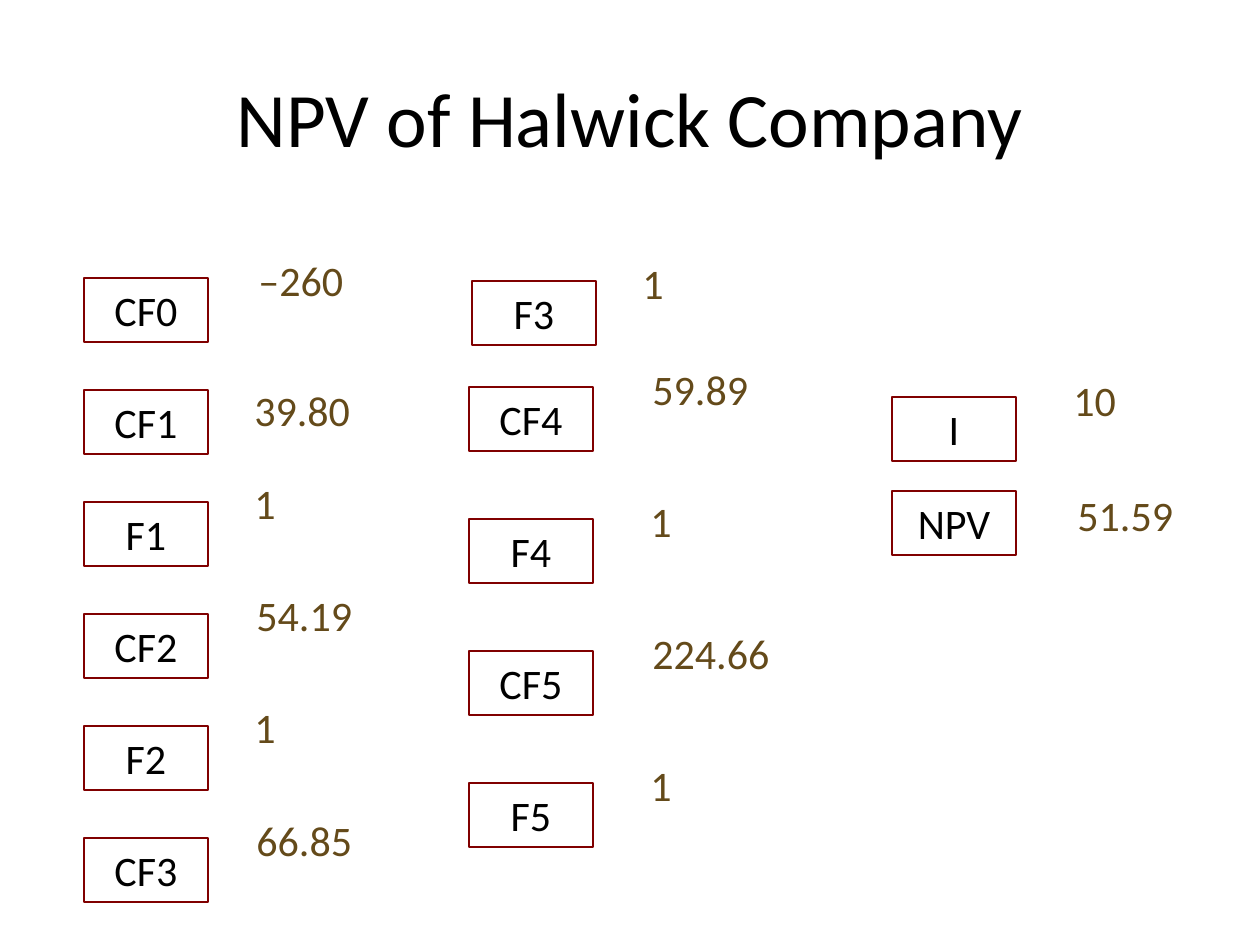
"""Build the NPV slide: calculator keys paired with their entries."""
from dataclasses import dataclass

from pptx import Presentation
from pptx.dml.color import RGBColor
from pptx.enum.shapes import MSO_SHAPE
from pptx.enum.text import MSO_ANCHOR, MSO_AUTO_SIZE, PP_ALIGN
from pptx.util import Emu, Pt

SCALE = 914400 / 126
COLORS = {"black": "000000", "white": "FFFFFF", "brown": "644A1A", "maroon": "800000"}
FONT = "Calibri"
KEY_W, KEY_H, TEXT_H = 124, 64, 63


@dataclass
class Entry:
    key: str
    value: str
    left: int
    top: int
    dx: int
    dy: int = -30
    width: int = 124


LEFT = [
    ("CF0", "–260", 162, -30, 195),
    ("CF1", "39.80", 158, -12, 124),
    ("F1", "1", 158, -31, 124),
    ("CF2", "54.19", 160, -31, 185),
    ("F2", "1", 158, -31, 124),
    ("CF3", "66.85", 160, -30, 185),
]
MIDDLE = [
    ("CF4", "59.89", 171, -30, 185),
    ("F4", "1", 169, -30, 124),
    ("CF5", "224.66", 171, -30, 185),
    ("F5", "1", 169, -30, 124),
]
RIGHT = [
    ("I", "10", 169, -29, 124),
    ("NPV", "51.59", 173, -8, 195),
]


def px(size: int) -> Emu:
    return Emu(round(size * SCALE))


def color(name: str) -> RGBColor:
    return RGBColor.from_string(COLORS[name])


def column(rows: list, left: int, top: int, step: int) -> list[Entry]:
    return [
        Entry(key, value, left, top + i * step, dx, dy, width)
        for i, (key, value, dx, dy, width) in enumerate(rows)
    ]


def write(shape, text: str, *, size: int = 24, ink: str = "black",
          align=PP_ALIGN.LEFT, anchor=MSO_ANCHOR.TOP, fit=MSO_AUTO_SIZE.SHAPE_TO_FIT_TEXT) -> None:
    frame = shape.text_frame
    frame.word_wrap = True
    frame.auto_size = fit
    frame.vertical_anchor = anchor
    para = frame.paragraphs[0]
    para.alignment = align
    run = para.add_run()
    run.text = text
    run.font.name = FONT
    run.font.size = Pt(size)
    run.font.color.rgb = color(ink)


def draw(slide, entry: Entry) -> None:
    key = slide.shapes.add_shape(
        MSO_SHAPE.RECTANGLE, px(entry.left), px(entry.top), px(KEY_W), px(KEY_H))
    key.shadow.inherit = False
    key.fill.solid()
    key.fill.fore_color.rgb = color("white")
    key.line.color.rgb = color("maroon")
    key.line.width = Pt(1)
    write(key, entry.key, align=PP_ALIGN.CENTER)
    value = slide.shapes.add_textbox(
        px(entry.left + entry.dx), px(entry.top + entry.dy), px(entry.width), px(TEXT_H))
    write(value, entry.value, ink="brown")


def main() -> None:
    deck = Presentation()
    deck.slide_width, deck.slide_height = px(1260), px(945)
    slide = deck.slides.add_slide(deck.slide_layouts[6])
    title = slide.shapes.add_textbox(px(63), px(38), px(1134), px(158))
    write(title, "NPV of Halwick Company", size=44, align=PP_ALIGN.CENTER,
          anchor=MSO_ANCHOR.MIDDLE, fit=MSO_AUTO_SIZE.NONE)
    entries = [
        *column(LEFT, 84, 278, 112),
        Entry("F3", "1", 472, 281, 158),
        *column(MIDDLE, 469, 387, 132),
        *column(RIGHT, 892, 397, 94),
    ]
    for entry in entries:
        draw(slide, entry)
    deck.save("out.pptx")


if __name__ == "__main__":
    main()
